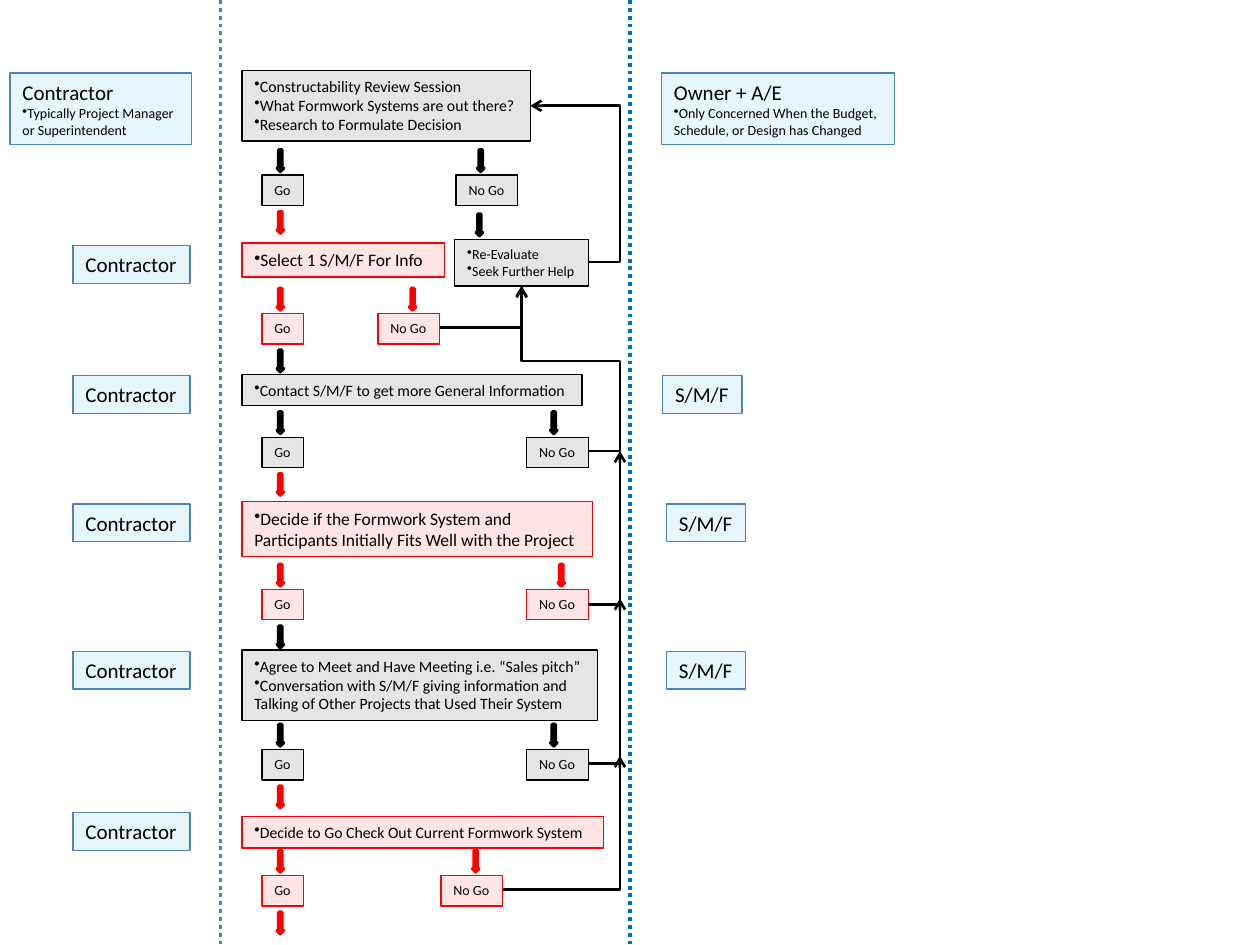
from typing import NamedTuple

from pptx import Presentation
from pptx.dml.color import RGBColor
from pptx.enum import dml, shapes, text
from pptx.oxml.ns import qn
from pptx.oxml.xmlchemy import OxmlElement
from pptx.util import Inches, Pt

BLACK = RGBColor(0x00, 0x00, 0x00)
RED = RGBColor(0xFF, 0x00, 0x00)
CYAN = RGBColor(0x00, 0xB0, 0xF0)
ROLE_BORDER = RGBColor(0x4F, 0x81, 0xBD)
LEFT_DIVIDER = RGBColor(0x4B, 0x7E, 0xBC)
RIGHT_DIVIDER = RGBColor(0x00, 0x70, 0xC0)
FONT = "Calibri"
BULLET = "•"
STAGE_LEFT = 1.92
RETURN_X = 4.92


class Stage(NamedTuple):
    """One step of the flow, with its choices relative to the step's left edge."""
    box: tuple
    lines: tuple
    size: int
    color: RGBColor
    arrow_top: float
    no_go_left: float
    no_go_arrow: float
    exit_color: RGBColor


STAGES = [
    Stage((STAGE_LEFT, 0.56, 2.29, 0.56),
          ("•Constructability Review Session",
           "•What Formwork Systems are out there?",
           "•Research to Formulate Decision"),
          9, BLACK, 1.19, 1.7, 1.87, RED),
    Stage((STAGE_LEFT, 1.93, 1.61, 0.27), ("•Select 1 S/M/F For Info",),
          10, RED, 2.29, 1.08, 1.33, BLACK),
    Stage((STAGE_LEFT, 2.97, 2.7, 0.25),
          ("•Contact S/M/F to get more General Information",),
          9, BLACK, 3.27, 2.26, 2.45, RED),
    Stage((STAGE_LEFT, 3.98, 2.78, 0.44),
          ("•Decide if the Formwork System and",
           "Participants Initially Fits Well with the Project"),
          10, RED, 4.48, 2.26, 2.51, BLACK),
    Stage((STAGE_LEFT, 5.16, 2.82, 0.56),
          ("•Agree to Meet and Have Meeting i.e. “Sales pitch”",
           "•Conversation with S/M/F giving information and",
           "Talking of Other Projects that Used Their System"),
          9, BLACK, 5.75, 2.26, 2.45, RED),
    Stage((STAGE_LEFT, 6.48, 2.87, 0.25),
          ("•Decide to Go Check Out Current Formwork System",),
          9, RED, 6.75, 1.58, 1.83, RED),
]

ROLES = [
    ((0.08, 0.58, 1.44, 0.57),
     ("Contractor", "•Typically Project Manager", "or Superintendent")),
    ((5.25, 0.58, 1.85, 0.57),
     ("Owner + A/E", "•Only Concerned When the Budget,",
      "Schedule, or Design has Changed")),
    *[((0.58, top, 0.93, 0.3), ("Contractor",))
      for top in (1.95, 2.98, 4, 5.17, 6.45)],
    *[((left, top, 0.63, 0.3), ("S/M/F",))
      for left, top in ((5.26, 2.98), (5.29, 4), (5.29, 5.17))],
]

RETURNS = [
    ((4.67, 2.08), (4.21, 0.84), "bentConnector3", (-0.547,)),
    ((3.49, 2.6), (4.14, 2.27), "bentConnector2", ()),
    ((4.67, 3.58), (4.14, 2.27), "bentConnector4", (-0.474, 0.545)),
    ((4.67, 4.8), (RETURN_X, 3.58), "bentConnector2", ()),
    ((4.67, 6.06), (RETURN_X, 4.75), "bentConnector2", ()),
    ((3.99, 7.06), (RETURN_X, 6), "bentConnector2", ()),
]


def add_child(parent, tag, **attributes):
    """Append an XML element with the given attributes."""
    child = OxmlElement(tag)
    for name, value in attributes.items():
        child.set(name, str(value))
    parent.append(child)
    return child


def write_line(paragraph, line, *, size, color=BLACK):
    """Write one line of text, bulleted when it starts with the bullet sign."""
    if line.startswith(BULLET):
        add_child(paragraph._p.get_or_add_pPr(), "a:buChar", char=BULLET)
    run = paragraph.add_run()
    run.text = line.removeprefix(BULLET)
    run.font.name = FONT
    run.font.size = Pt(size)
    run.font.color.rgb = color


def add_box(slide, box, lines, *, sizes, color, border=None):
    """Add a tinted, outlined text box with one paragraph per line."""
    shape = slide.shapes.add_textbox(*map(Inches, box))
    shape.fill.solid()
    shape.fill.fore_color.rgb = color
    tint = next(shape.element.spPr.iter(qn("a:srgbClr")))
    add_child(tint, "a:alpha", val=10000)
    shape.line.color.rgb = border or color
    shape.line.width = Pt(0.75)
    frame = shape.text_frame
    frame.word_wrap = False
    frame.auto_size = text.MSO_AUTO_SIZE.SHAPE_TO_FIT_TEXT
    for index, (line, size) in enumerate(zip(lines, sizes)):
        paragraph = frame.add_paragraph() if index else frame.paragraphs[0]
        write_line(paragraph, line, size=size)


def add_down_arrow(slide, left, top, color):
    """Add a short thick arrow pointing down."""
    shape = slide.shapes.add_shape(
        shapes.MSO_SHAPE.DOWN_ARROW,
        Inches(left), Inches(top), Inches(0.05), Inches(0.17))
    shape.shadow.inherit = False
    shape.fill.solid()
    shape.fill.fore_color.rgb = color
    shape.line.color.rgb = color
    shape.line.width = Pt(2)


def add_line(slide, start, end, *, kind, color, width):
    """Add a connector without a shadow."""
    connector = slide.shapes.add_connector(kind, *map(Inches, start + end))
    connector.line.color.rgb = color
    connector.line.width = Pt(width)
    add_child(connector.element.spPr, "a:effectLst")
    return connector


def add_divider(slide, left, height, color):
    """Add a dotted vertical line between two columns."""
    divider = add_line(slide, (left, 0), (left, height), color=color,
                       kind=shapes.MSO_CONNECTOR.STRAIGHT, width=2.25)
    divider.line.dash_style = dml.MSO_LINE.ROUND_DOT


def add_return(slide, start, end, preset, adjustments):
    """Add a bent arrow that leads back to an earlier step."""
    connector = add_line(slide, start, end, color=BLACK,
                         kind=shapes.MSO_CONNECTOR.ELBOW, width=1.5)
    add_child(connector.line._get_or_add_ln(), "a:tailEnd", type="arrow")
    geometry = connector.element.spPr.find(qn("a:prstGeom"))
    geometry.set("prst", preset)
    guides = geometry.get_or_add_avLst()
    for number, value in enumerate(adjustments, 1):
        add_child(guides, "a:gd", name=f"adj{number}",
                  fmla=f"val {round(value * 100000)}")


def add_stage(slide, stage):
    """Add a step with its Go and No Go choices and the arrow to the next step."""
    left = stage.box[0]
    choice_top = stage.arrow_top + 0.2
    add_box(slide, stage.box, stage.lines, color=stage.color,
            sizes=[stage.size] * len(stage.lines))
    for label, offset, arrow_offset, width in (
            ("Go", 0.16, 0.28, 0.33),
            ("No Go", stage.no_go_left, stage.no_go_arrow, 0.49)):
        add_down_arrow(slide, left + arrow_offset, stage.arrow_top, stage.color)
        add_box(slide, (left + offset, choice_top, width, 0.24), (label,),
                sizes=(8,), color=stage.color)
    add_down_arrow(slide, left + 0.28, choice_top + 0.29, stage.exit_color)


def add_re_evaluation(slide, box):
    """Add the re-evaluation step and the arrow that leads into it."""
    left, top = box[:2]
    add_down_arrow(slide, left + 0.17, top - 0.2, BLACK)
    add_box(slide, box, ("•Re-Evaluate", "•Seek Further Help"),
            sizes=(8, 8), color=BLACK)


def main():
    """Build the formwork decision flow."""
    presentation = Presentation()
    presentation.slide_width = Inches(10)
    presentation.slide_height = Inches(7.5)
    slide = presentation.slides.add_slide(presentation.slide_layouts[6])
    add_divider(slide, 5, 7.5, RIGHT_DIVIDER)
    add_divider(slide, 1.75, 7.5, LEFT_DIVIDER)
    for stage in STAGES:
        add_stage(slide, stage)
    add_re_evaluation(slide, (3.61, 1.9, 1.06, 0.37))
    for box, lines in ROLES:
        add_box(slide, box, lines, sizes=(12, 8, 8), color=CYAN,
                border=ROLE_BORDER)
    for route in RETURNS:
        add_return(slide, *route)
    presentation.save("out.pptx")


if __name__ == "__main__":
    main()
